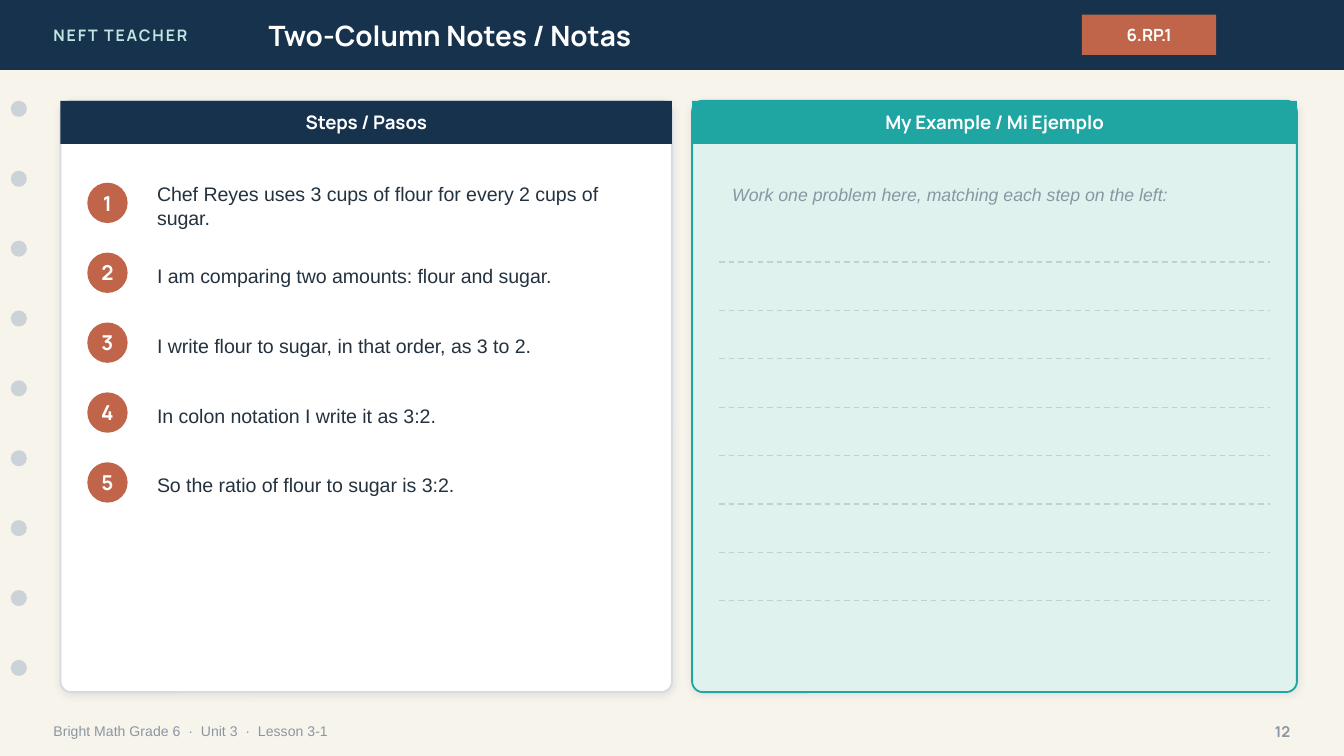
from lxml.etree import SubElement
from pptx import Presentation
from pptx.dml.color import RGBColor
from pptx.enum.dml import MSO_LINE
from pptx.enum.shapes import MSO_CONNECTOR, MSO_SHAPE as SHAPE
from pptx.enum.text import MSO_ANCHOR, PP_ALIGN as ALIGN
from pptx.oxml.ns import qn
from pptx.util import Inches, Pt

CREAM = RGBColor(0xF7, 0xF4, 0xEC)
NAVY = RGBColor(0x17, 0x32, 0x4D)
TEAL = RGBColor(0x1F, 0xA6, 0xA2)
MINT = RGBColor(0xDF, 0xF2, 0xEE)
PALE_TEAL = RGBColor(0xBF, 0xE6, 0xE2)
RUST = RGBColor(0xC0, 0x65, 0x4A)
WHITE = RGBColor(0xFF, 0xFF, 0xFF)
INK = RGBColor(0x24, 0x32, 0x3F)
GRAY = RGBColor(0x8A, 0x96, 0xA3)
HOLE = RGBColor(0xCB, 0xD3, 0xD9)
BORDER = RGBColor(0xD6, 0xDB, 0xDF)
RULE = RGBColor(0xC7, 0xCD, 0xD2)

prs = Presentation()
prs.slide_width, prs.slide_height = Inches(10), Inches(5.625)
s = prs.slides.add_slide(prs.slide_layouts[6])
s.background.fill.solid()
s.background.fill.fore_color.rgb = CREAM

# Grid: 100 square units across the slide; rows are counted in units
U = prs.slide_width // 100
ROW = 5.2          # header height, hole spacing and step spacing
RULE_GAP = 3.6     # spacing of the writing lines
TOP, CARD_H, BAND_H = 7.5, 44, 3.2


def add_box(kind, x, y, w, h, fill, line=None):
    sp = s.shapes.add_shape(kind, int(x * U), int(y * U), int(w * U), int(h * U))
    sp.shadow.inherit = False
    sp.fill.solid()
    sp.fill.fore_color.rgb = fill
    if line is None:
        sp.line.fill.background()
    else:
        sp.line.color.rgb = line
        sp.line.width = Pt(1)
    return sp


def add_text(text, x=0, y=0, w=0, h=0, sp=None, size=10, font="Manrope", color=WHITE,
             bold=False, italic=False, align=ALIGN.LEFT, spacing=None, inset=1):
    if sp is None:
        sp = s.shapes.add_textbox(int(x * U), int(y * U), int(w * U), int(h * U))
    tf = sp.text_frame
    tf.word_wrap = True
    tf.vertical_anchor = MSO_ANCHOR.MIDDLE
    tf.margin_left = tf.margin_right = int(inset * U)
    p = tf.paragraphs[0]
    p.alignment = align
    r = p.add_run()
    r.text = text
    r.font.name, r.font.size = font, Pt(size)
    r.font.bold, r.font.italic = bold, italic
    r.font.color.rgb = color
    if spacing:
        r.font._element.set("spc", str(spacing))


# Header bar
add_box(SHAPE.RECTANGLE, 0, 0, 100, ROW, NAVY)
add_text("NEFT TEACHER", 3, 0, 24, ROW, size=8.5, color=PALE_TEAL, bold=True, spacing=100)
add_text("Two-Column Notes / Notas", 19, 0, 56, ROW, size=15, bold=True)
tag = add_box(SHAPE.RECTANGLE, 80.5, 1.1, 10, 3, RUST)
add_text("6.RP.1", sp=tag, size=9, bold=True, align=ALIGN.CENTER)

# Binder holes
for i in range(9):
    add_box(SHAPE.OVAL, 0.8, TOP + i * ROW, 1.2, 1.2, HOLE)

# Footer
add_text("Bright Math Grade 6  ·  Unit 3  ·  Lesson 3-1", 3, 53, 70, 2.8,
         size=7.5, font="Arial", color=GRAY)
add_text("12", 92, 53, 5, 2.8, size=8, color=GRAY, bold=True, align=ALIGN.RIGHT)

# Two cards with title bands
for title, x, w, fill, line, band_fill in (
    ("Steps / Pasos", 4.5, 45.5, WHITE, BORDER, NAVY),
    ("My Example / Mi Ejemplo", 51.5, 45, MINT, TEAL, TEAL),
):
    card = add_box(SHAPE.ROUNDED_RECTANGLE, x, TOP, w, CARD_H, fill, line)
    card.adjustments[0] = 0.018
    effects = card._element.spPr.find(qn("a:effectLst"))
    shadow = SubElement(effects, qn("a:outerShdw"), blurRad=str(Pt(4)), dist=str(Pt(1)),
                        dir="5400000", algn="ctr", rotWithShape="0")
    tint = SubElement(shadow, qn("a:srgbClr"), val="1C2E42")
    SubElement(tint, qn("a:alpha"), val="10000")
    band = add_box(SHAPE.RECTANGLE, x, TOP, w, BAND_H, band_fill)
    add_text(title, sp=band, bold=True, align=ALIGN.CENTER)

# Numbered steps
steps = (
    "Chef Reyes uses 3 cups of flour for every 2 cups of sugar.",
    "I am comparing two amounts: flour and sugar.",
    "I write flour to sugar, in that order, as 3 to 2.",
    "In colon notation I write it as 3:2.",
    "So the ratio of flour to sugar is 3:2.",
)
for i, step in enumerate(steps):
    y = 13 + i * ROW
    badge = add_box(SHAPE.OVAL, 6.5, y + 0.6, 3, 3, RUST)
    add_text(str(i + 1), sp=badge, size=11, bold=True, align=ALIGN.CENTER, inset=0)
    add_text(step, 10.7, y, 37.8, 4.6, size=10.5, font="Arial", color=INK)

# Work area with dashed writing lines
add_text("Work one problem here, matching each step on the left:", 53.5, 12.5, 41, 4,
         size=9.5, font="Arial", color=GRAY, italic=True)
for i in range(8):
    y = int((19.5 + i * RULE_GAP) * U)
    rule = s.shapes.add_connector(MSO_CONNECTOR.STRAIGHT, int(53.5 * U), y, int(94.5 * U), y)
    rule.line.color.rgb = RULE
    rule.line.width = Pt(0.75)
    rule.line.dash_style = MSO_LINE.DASH
    SubElement(rule._element.spPr, qn("a:effectLst"))

prs.save("out.pptx")
